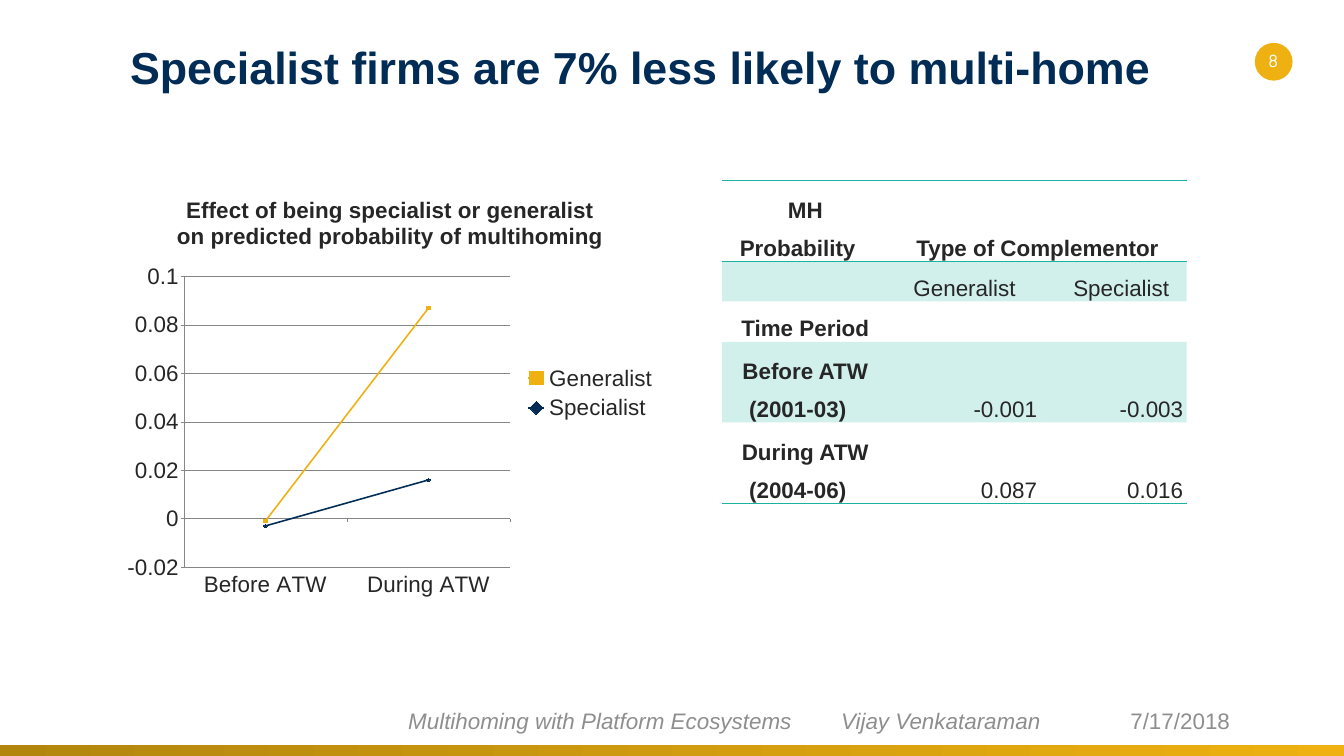
from dataclasses import dataclass

from lxml.etree import SubElement
from pptx import Presentation
from pptx.chart.data import CategoryChartData
from pptx.dml.color import RGBColor
from pptx.enum.chart import XL_CHART_TYPE as ChartType
from pptx.enum.chart import XL_LEGEND_POSITION as LegendPosition
from pptx.enum.chart import XL_MARKER_STYLE as Marker
from pptx.enum.chart import XL_TICK_LABEL_POSITION as LabelPosition
from pptx.enum.shapes import MSO_SHAPE as Shape
from pptx.enum.text import MSO_ANCHOR as Anchor
from pptx.enum.text import MSO_AUTO_SIZE as AutoSize
from pptx.enum.text import PP_ALIGN as Align
from pptx.oxml.ns import qn
from pptx.util import Inches, Pt

NAVY, GOLD, DARK_GOLD, TEAL = "002C56", "EEB111", "B2850D", "1AB39F"
INK, GREY, AXIS_GREY, WHITE = "262626", "8E8E8E", "868686", "FFFFFF"
NO_STYLE = "{2D5ABB26-0587-4C30-8999-92F81FD0307C}"


@dataclass
class Box:
    left: float
    top: float
    width: float
    height: float

    def lengths(self) -> list:
        return [Inches(v) for v in (self.left, self.top, self.width, self.height)]


@dataclass
class Series:
    name: str
    values: tuple
    color: str
    marker: Marker


@dataclass
class Row:
    height: float
    texts: tuple
    shaded: bool = False
    rules: tuple = ()


def rgb(value: str) -> RGBColor:
    return RGBColor.from_string(value)


def style_font(font, size=32, color=INK, bold=False, italic=False, face="Arial") -> None:
    font.name, font.size, font.bold, font.italic = face, Pt(size), bold, italic
    font.color.rgb = rgb(color)


def write(frame, text: str, align=Align.LEFT, anchor=Anchor.MIDDLE, margins=(0.27, 0.13),
          line_spacing=None, indent=None, tab=None, **font_format) -> None:
    frame.word_wrap = True
    frame.vertical_anchor = anchor
    frame.margin_left = frame.margin_right = Inches(margins[0])
    frame.margin_top = frame.margin_bottom = Inches(margins[1])
    frame.text = text
    paragraph = frame.paragraphs[0]
    paragraph.alignment = align
    paragraph.space_before = Pt(0)
    if line_spacing:
        paragraph.line_spacing = line_spacing
    properties = paragraph._p.get_or_add_pPr()
    if indent:
        properties.set("marL", "0")
        properties.set("indent", str(Inches(indent)))
    if tab:
        tabs = SubElement(properties, qn("a:tabLst"))
        SubElement(tabs, qn("a:tab"), pos=str(Inches(tab)), algn="l")
    for run in paragraph.runs:
        style_font(run.font, **font_format)


def add_text(slide, box: Box, text: str, **text_format) -> None:
    write(slide.shapes.add_textbox(*box.lengths()).text_frame, text, **text_format)


def add_block(slide, kind: Shape, box: Box, *colors: str) -> None:
    block = slide.shapes.add_shape(kind, *box.lengths())
    block.shadow.inherit = False
    block.line.fill.background()
    if len(colors) == 1:
        block.fill.solid()
        block.fill.fore_color.rgb = rgb(colors[0])
        return
    block.fill.gradient()
    block.fill.gradient_angle = 0
    for stop, color in zip(block.fill.gradient_stops, colors):
        stop.color.rgb = rgb(color)


def add_rules(cell, sides: tuple) -> None:
    properties = cell._tc.get_or_add_tcPr()
    for position, side in enumerate(sides):
        rule = SubElement(properties, qn(f"a:ln{side}"), w=str(Pt(1)))
        SubElement(SubElement(rule, qn("a:solidFill")), qn("a:srgbClr"), val=TEAL)
        properties.insert(position, rule)


def fill_cell(cell, shaded: bool) -> None:
    if not shaded:
        cell.fill.background()
        return
    cell.fill.solid()
    cell.fill.fore_color.rgb = rgb(TEAL)
    color = cell._tc.tcPr.find(".//" + qn("a:srgbClr"))
    SubElement(color, qn("a:alpha"), val="20000")


def add_probabilities(slide, box: Box, widths: tuple, rows: list) -> None:
    table = slide.shapes.add_table(len(rows), len(widths), *box.lengths()).table
    table.first_row = table.horz_banding = False
    table._tbl.tblPr.find(qn("a:tableStyleId")).text = NO_STYLE
    for column, width in zip(table.columns, widths):
        column.width = Inches(width)
    for r, row in enumerate(rows):
        table.rows[r].height = Inches(row.height)
        for c, text in enumerate(row.texts):
            cell = table.cell(r, c)
            fill_cell(cell, row.shaded)
            add_rules(cell, row.rules)
            cell.vertical_anchor = Anchor.BOTTOM
            cell.margin_left = cell.margin_right = Inches(0.07)
            cell.margin_top = cell.margin_bottom = 0
            if text:
                is_number = c > 0 and r > 2
                write(cell.text_frame, text, align=Align.RIGHT if is_number else Align.CENTER,
                      anchor=Anchor.BOTTOM, margins=(0.07, 0), line_spacing=1.5,
                      indent=0.3, bold=c == 0 or r == 0)
    table.cell(0, 1).merge(table.cell(0, 2))


def add_effect_chart(slide, box: Box, title: str, periods: tuple, lines: list) -> None:
    data = CategoryChartData()
    data.categories = periods
    for line in lines:
        data.add_series(line.name, line.values)
    chart = slide.shapes.add_chart(ChartType.LINE_MARKERS, *box.lengths(), data).chart
    style_font(chart.font)
    chart.has_title = True
    chart.chart_title.text_frame.text = title
    style_font(chart.chart_title.text_frame.paragraphs[0].runs[0].font, bold=True)
    chart.chart_title.include_in_layout = False
    chart.has_legend = True
    chart.legend.position = LegendPosition.RIGHT
    chart.legend.include_in_layout = False
    probability, period = chart.value_axis, chart.category_axis
    probability.minimum_scale, probability.maximum_scale = -0.02, 0.1
    probability.major_unit = 0.02
    probability.tick_labels.number_format = "General"
    probability.tick_labels.number_format_is_linked = False
    period.tick_label_position = LabelPosition.LOW
    for outline in (probability.format.line, period.format.line,
                    probability.major_gridlines.format.line):
        outline.color.rgb = rgb(AXIS_GREY)
        outline.width = Pt(0.75)
    chart.plots[0].vary_by_categories = False
    for series, line in zip(chart.plots[0].series, lines):
        series.smooth = False
        series.format.line.color.rgb = rgb(line.color)
        series.format.line.width = Pt(2.25)
        series.marker.style = line.marker
        series.marker.size = 5
        series.marker.format.fill.solid()
        series.marker.format.fill.fore_color.rgb = rgb(line.color)
        series.marker.format.line.color.rgb = rgb(line.color)


def main() -> None:
    deck = Presentation()
    deck.slide_width, deck.slide_height = Inches(26.67), Inches(15)
    slide = deck.slides.add_slide(deck.slide_layouts[5])

    headline = slide.shapes.title
    headline.left, headline.top, headline.width, headline.height = Box(
        2.31, 0.65, 21.25, 1.6).lengths()
    write(headline.text_frame, "Specialist firms are 7% less likely to multi-home",
          anchor=Anchor.TOP, size=64, color=NAVY, bold=True)
    headline.text_frame.auto_size = AutoSize.NONE

    add_block(slide, Shape.OVAL, Box(24.9, 0.85, 0.75, 0.75), GOLD)
    add_block(slide, Shape.RECTANGLE, Box(0, 14.79, 26.67, 0.38), DARK_GOLD, GOLD)
    add_text(slide, Box(24.68, 0.95, 1.17, 0.8), "8", align=Align.CENTER, anchor=Anchor.TOP,
             margins=(0.1, 0.05), size=24, color=WHITE, face="Manrope")
    add_text(slide, Box(7.17, 13.86, 14.43, 0.88),
             "Multihoming with Platform Ecosystems\tVijay Venkataraman",
             margins=(0.93, 0.13), tab=8.59, color=GREY, italic=True)
    add_text(slide, Box(22.16, 13.9, 3.18, 0.8), "7/17/2018", color=GREY)

    add_probabilities(slide, Box(14.33, 3.58, 9.22, 6.3), (3, 3.32, 2.9), [
        Row(1.57, ("MH Probability", "Type of Complementor", ""), rules=("T", "B")),
        Row(0.72, ("", "Generalist", "Specialist"), shaded=True),
        Row(0.72, ("Time Period", "", "")),
        Row(1.57, ("Before ATW (2001-03)", "-0.001", "-0.003"), shaded=True),
        Row(1.57, ("During ATW (2004-06)", "0.087", "0.016"), rules=("B",)),
    ])
    add_effect_chart(
        slide, Box(2.31, 3.58, 10.86, 8.44),
        "Effect of being specialist or generalist on predicted probability of multihoming",
        ("Before ATW", "During ATW"),
        [Series("Generalist", (-0.001, 0.087), GOLD, Marker.SQUARE),
         Series("Specialist", (-0.003, 0.016), NAVY, Marker.DIAMOND)])
    deck.save("out.pptx")


if __name__ == "__main__":
    main()
